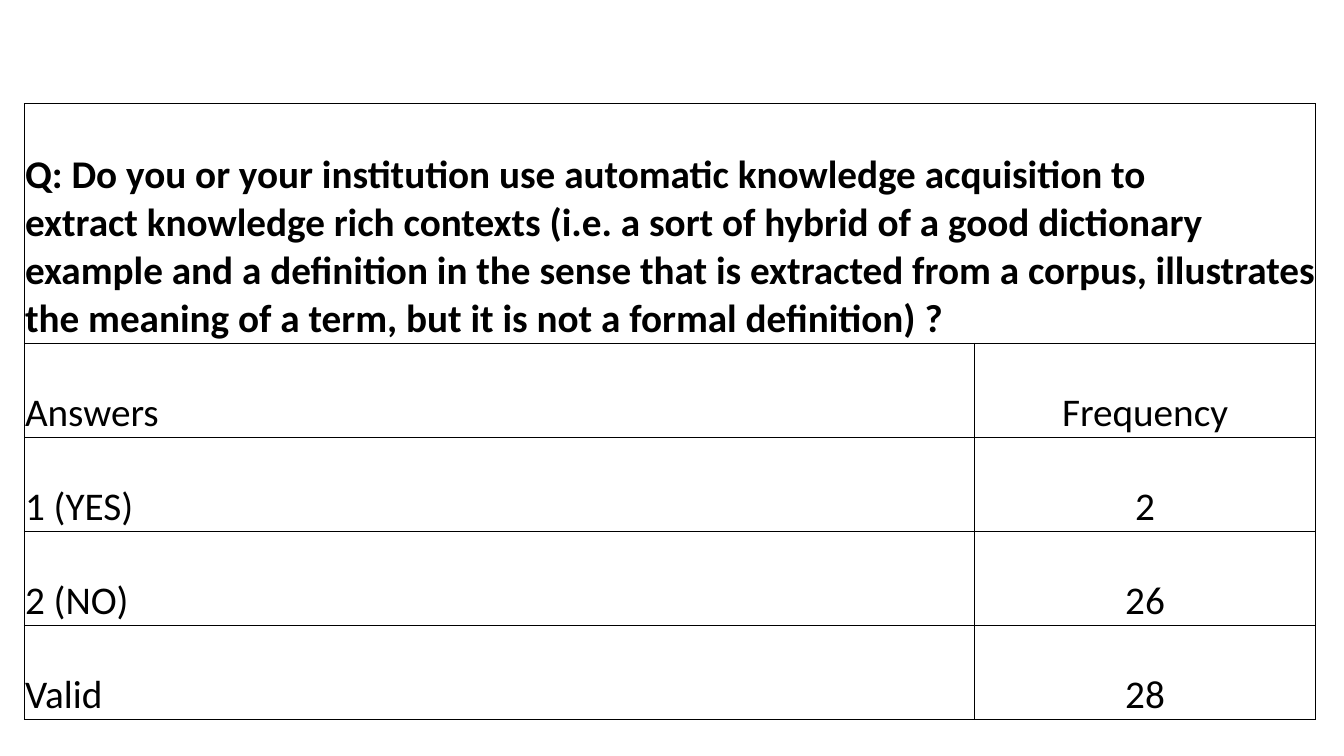
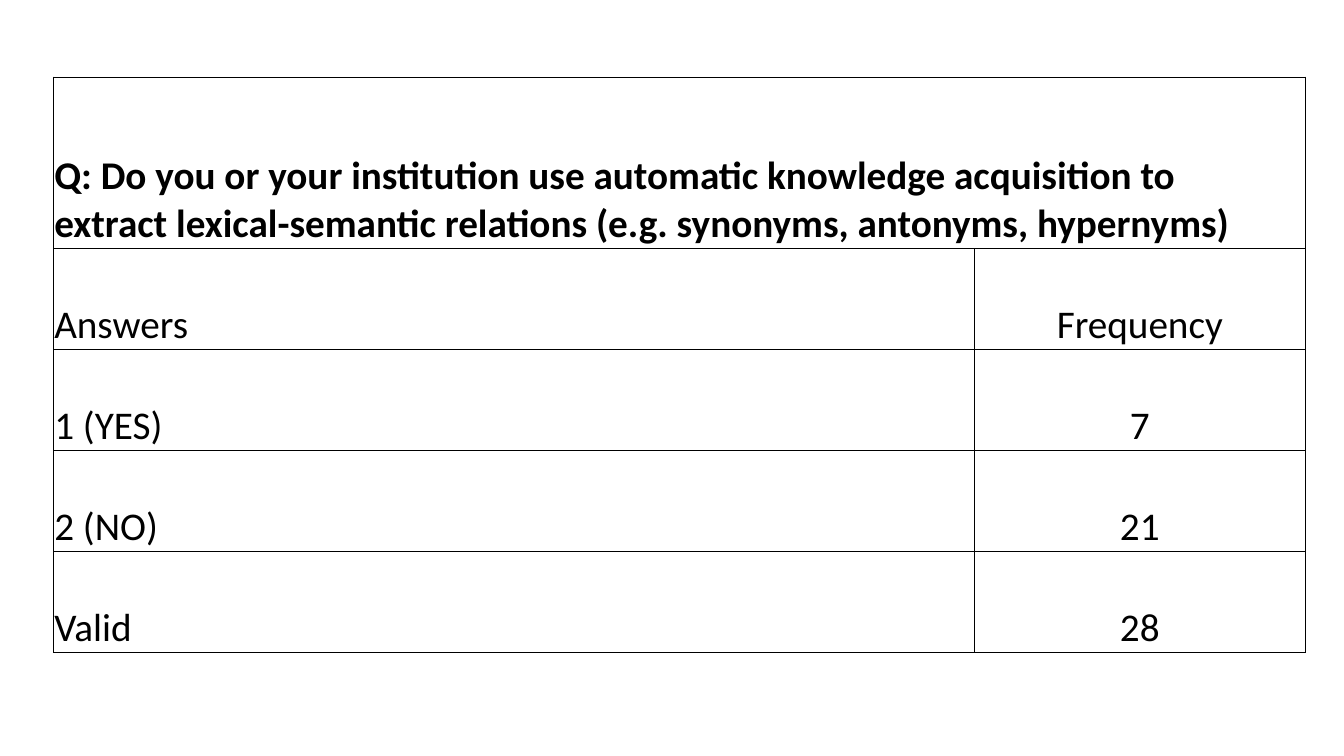
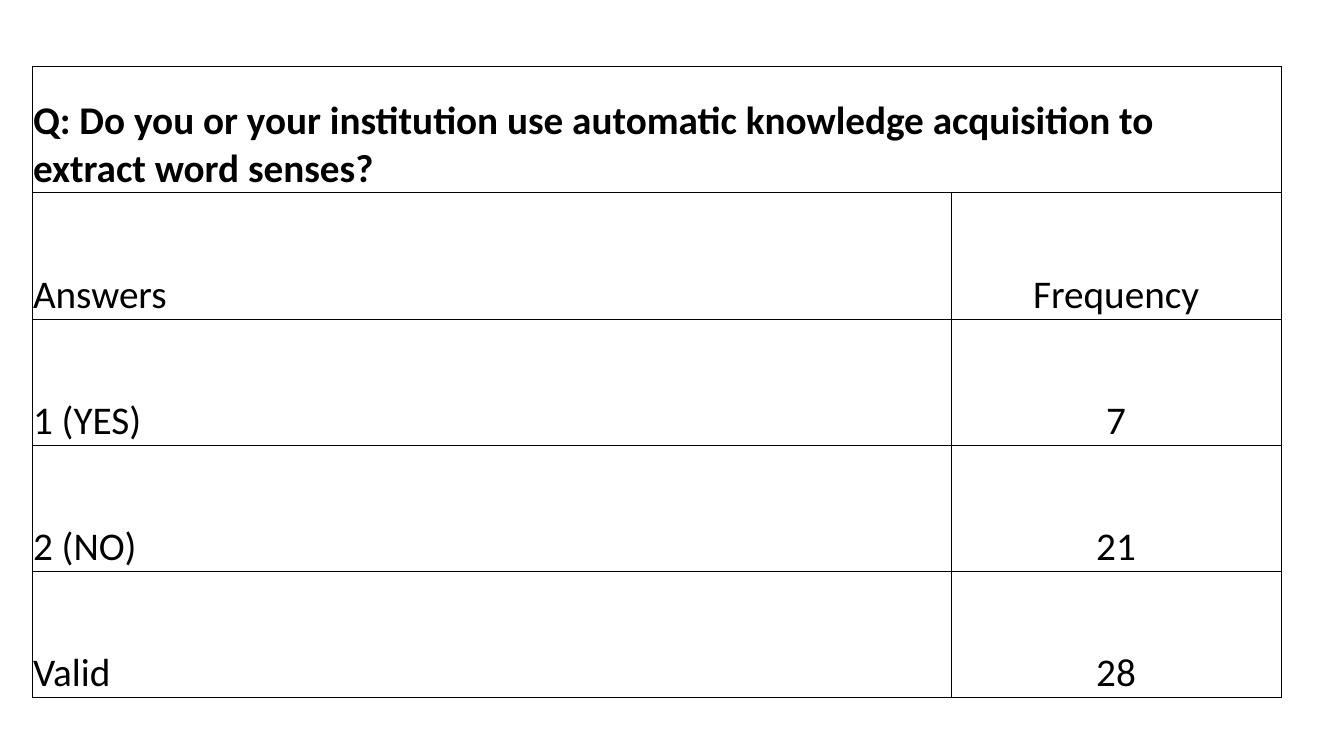
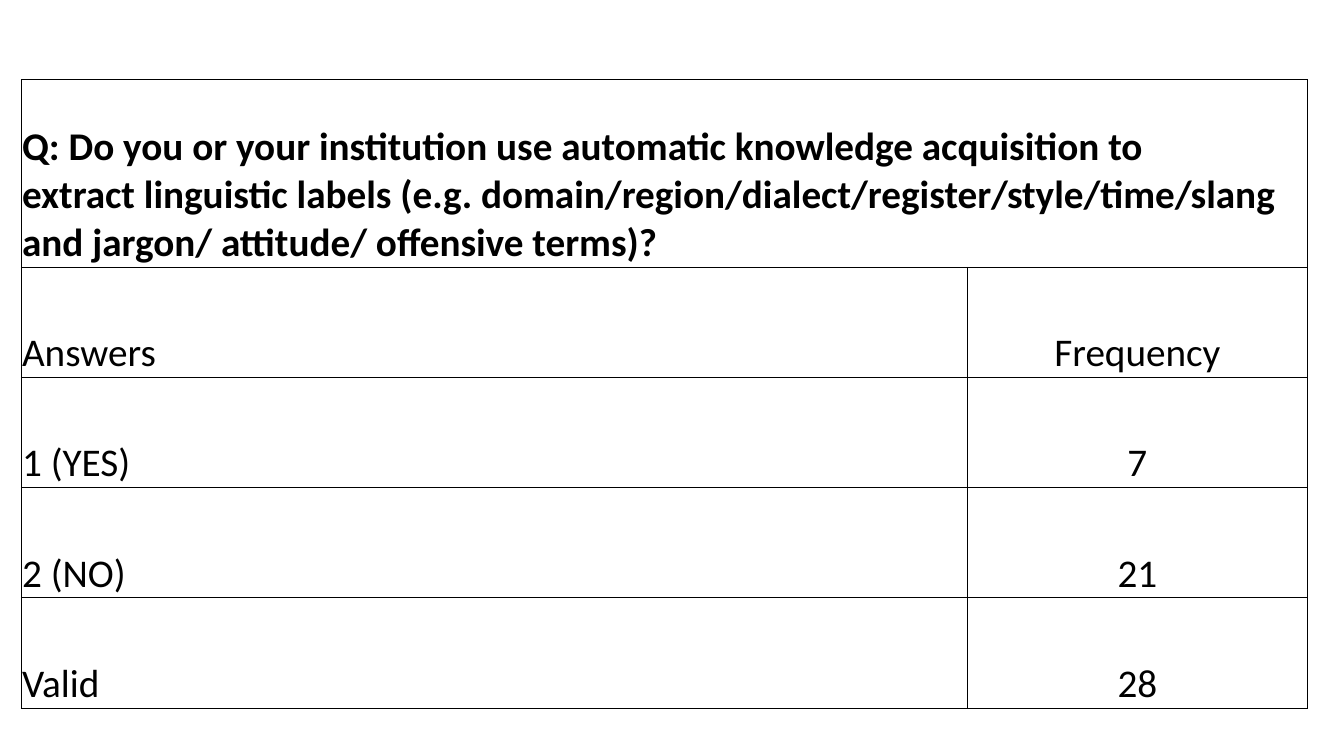
"""Build four survey slides, each with one question and its answer frequencies."""
import pptx
import pptx.dml.color
import pptx.enum.text
import pptx.oxml
import pptx.oxml.ns
import pptx.util

Pt = pptx.util.Pt
PP_ALIGN = pptx.enum.text.PP_ALIGN

COLORS = {"text": "000000", "border": "000000"}
FONT = {"name": "Calibri", "size": Pt(28)}
CELL = {
    "vertical_anchor": pptx.enum.text.MSO_ANCHOR.BOTTOM,
    "margin_left": Pt(0.6),
    "margin_right": Pt(0.6),
    "margin_top": Pt(0.6),
    "margin_bottom": 0,
}
ANSWER_SHARE = 0.7356
NBSP = chr(160)
STEM = f"Q: Do you or your institution use automatic knowledge acquisition to extract{NBSP}"

QUESTIONS = [
    {
        "text": "knowledge rich contexts (i.e. a sort of hybrid of a good dictionary "
                "example and a definition in the sense that is extracted from a corpus, "
                "illustrates the meaning of a term, but it is not a formal "
                f"definition){NBSP}?",
        "left": 17.3, "top": 74, "width": 922.6, "head": 171.2, "row": 67.1,
        "counts": [2, 26],
    },
    {
        "text": "lexical-semantic relations (e.g. synonyms, antonyms, hypernyms)",
        "left": 38.2, "top": 55, "width": 894.2, "head": 122.4, "row": 72.1,
        "counts": [7, 21],
    },
    {
        "text": "word senses?",
        "left": 23, "top": 47.6, "width": 892.2, "head": 90.1, "row": 90.1,
        "counts": [7, 21],
    },
    {
        "text": f"linguistic labels{NBSP}(e.g. domain/region/dialect/register/style/time/slang "
                "and jargon/ attitude/ offensive terms)?",
        "left": 15.2, "top": 57, "width": 918.7, "head": 133.9, "row": 78.7,
        "counts": [7, 21],
    },
]


def set_borders(cell):
    """Draw a thin line on all four sides of a cell."""
    tcPr = cell._tc.get_or_add_tcPr()
    for i, side in enumerate(("lnL", "lnR", "lnT", "lnB")):
        tcPr.insert(i, pptx.oxml.parse_xml(
            f'<a:{side} {pptx.oxml.ns.nsdecls("a")} w="{Pt(0.5)}"><a:solidFill>'
            f'<a:srgbClr val="{COLORS["border"]}"/></a:solidFill></a:{side}>'))


def set_text(cell, text, bold, align):
    """Write one formatted run into a cell."""
    p = cell.text_frame.paragraphs[0]
    p.alignment = align
    r = p.add_run()
    r.text = text
    for name, value in {**FONT, "bold": bold}.items():
        setattr(r.font, name, value)
    r.font.color.rgb = pptx.dml.color.RGBColor.from_string(COLORS["text"])


prs = pptx.Presentation()
prs.slide_width, prs.slide_height = Pt(960), Pt(540)

for q in QUESTIONS:
    s = prs.slides.add_slide(prs.slide_layouts[6])
    yes, no = q["counts"]
    rows = [("Answers", "Frequency"), ("1 (YES)", yes), ("2 (NO)", no), ("Valid", yes + no)]
    heights = [q["head"]] + [q["row"]] * len(rows)
    table = s.shapes.add_table(len(heights), 2, Pt(q["left"]), Pt(q["top"]),
                               Pt(q["width"]), Pt(sum(heights))).table
    table.first_row = table.horz_banding = False
    table.columns[0].width = Pt(q["width"] * ANSWER_SHARE)
    table.columns[1].width = Pt(q["width"] * (1 - ANSWER_SHARE))
    for row, height in zip(table.rows, heights):
        row.height = Pt(height)
    for cell in table.iter_cells():
        for name, value in CELL.items():
            setattr(cell, name, value)
        cell.fill.background()
        set_borders(cell)

    table.cell(0, 0).merge(table.cell(0, 1))
    set_text(table.cell(0, 0), STEM + q["text"], True, PP_ALIGN.LEFT)
    for i, (answer, count) in enumerate(rows, start=1):
        set_text(table.cell(i, 0), answer, False, PP_ALIGN.LEFT)
        set_text(table.cell(i, 1), str(count), False, PP_ALIGN.CENTER)

prs.save("out.pptx")
